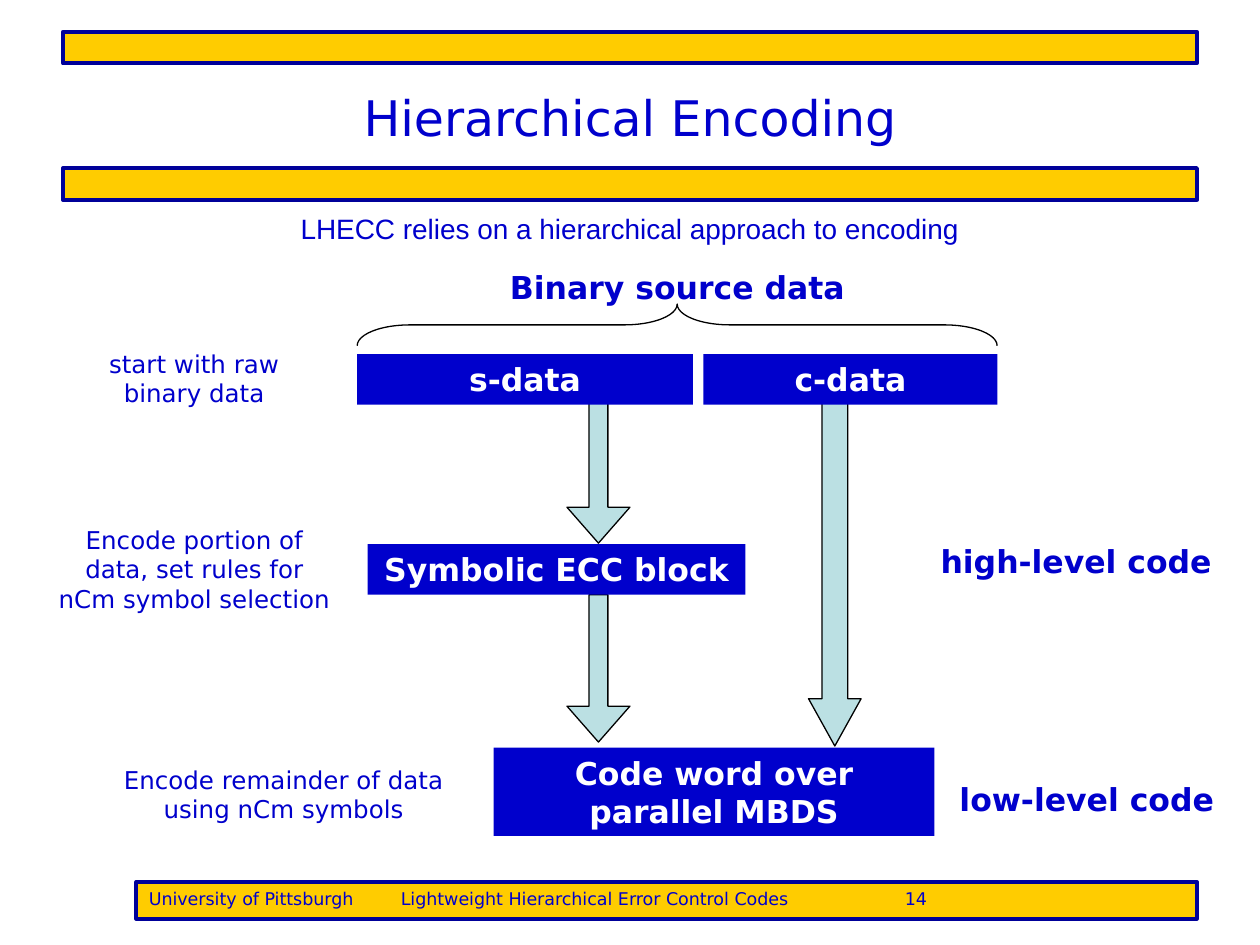
from dataclasses import dataclass

from lxml import etree
from pptx import Presentation
from pptx.dml.color import RGBColor
from pptx.enum import shapes, text
from pptx.oxml import ns
from pptx.util import Cm, Pt

BLUE = RGBColor(0x00, 0x00, 0xCC)
NAVY = RGBColor(0x00, 0x00, 0x99)
GOLD = RGBColor(0xFF, 0xCC, 0x00)
TEAL = RGBColor(0xBB, 0xE0, 0xE3)
BLACK = RGBColor(0x00, 0x00, 0x00)
WHITE = RGBColor(0xFF, 0xFF, 0xFF)
SANS = "DejaVu Sans"
KIND = shapes.MSO_SHAPE
ALIGN = text.PP_ALIGN
ANCHOR = text.MSO_ANCHOR


@dataclass
class Area:
    """A frame in centimetres."""
    left: float
    top: float
    width: float
    height: float

    def frame(self) -> tuple:
        return Cm(self.left), Cm(self.top), Cm(self.width), Cm(self.height)


@dataclass
class Label:
    words: str
    area: Area
    size: int = 18
    bold: bool = True
    font: str = SANS
    anchor: ANCHOR = ANCHOR.TOP


@dataclass
class Arrow:
    area: Area
    shaft: float
    head: float


def write(shape, words: str, size=18, bold=False, font=SANS, color=BLUE,
          align=ALIGN.CENTER, anchor=ANCHOR.TOP, tabs=()) -> None:
    frame = shape.text_frame
    frame.word_wrap = True
    frame.vertical_anchor = anchor
    para = frame.paragraphs[0]
    para.alignment = align
    if tabs:
        stops = etree.SubElement(para._p.get_or_add_pPr(), ns.qn("a:tabLst"))
        for stop in tabs:
            etree.SubElement(stops, ns.qn("a:tab"), pos=str(Cm(stop)), algn="l")
    run = para.add_run()
    run.text = words
    run.font.name = font
    run.font.size = Pt(size)
    run.font.bold = bold
    run.font.color.rgb = color


def draw(slide, kind, area: Area, fill=None, line=None, weight=0.75, adjust=()):
    shape = slide.shapes.add_shape(kind, *area.frame())
    shape.shadow.inherit = False
    if fill is None:
        shape.fill.background()
    else:
        shape.fill.solid()
        shape.fill.fore_color.rgb = fill
    if line is None:
        shape.line.fill.background()
    else:
        shape.line.color.rgb = line
        shape.line.width = Pt(weight)
    for index, value in enumerate(adjust):
        shape.adjustments[index] = value
    return shape


def band(slide, area: Area):
    return draw(slide, KIND.RECTANGLE, area, GOLD, NAVY, 2.25)


def block(slide, label: Label) -> None:
    shape = draw(slide, KIND.RECTANGLE, label.area, BLUE)
    write(shape, label.words, bold=True, color=WHITE)


def caption(slide, label: Label) -> None:
    box = slide.shapes.add_textbox(*label.area.frame())
    write(box, label.words, size=label.size, bold=label.bold,
          font=label.font, anchor=label.anchor)


ARROWS = [
    Arrow(Area(16.3, 8.05, 1.06, 6.99), 0.49, 0.9),
    Arrow(Area(11.43, 7.98, 1.27, 2.97), 0.3, 0.57),
    Arrow(Area(11.43, 11.99, 1.27, 2.97), 0.3, 0.57),
]
BLOCKS = [
    Label("s-data", Area(7.2, 7.14, 6.77, 1.02)),
    Label("c-data", Area(14.18, 7.14, 5.93, 1.02)),
    Label("Symbolic ECC block", Area(7.41, 10.97, 7.62, 1.02)),
    Label("Code word over parallel MBDS", Area(9.95, 15.07, 8.89, 1.78)),
]
CAPTIONS = [
    Label("Hierarchical Encoding", Area(1.27, 0.76, 22.86, 3.18), 28, False,
          anchor=ANCHOR.MIDDLE),
    Label("LHECC relies on a hierarchical approach to encoding",
          Area(2.96, 4.14, 19.47, 0.94), 16, False, "Arial"),
    Label("Binary source data", Area(7.62, 5.28, 12.07, 1.02)),
    Label("start with raw binary data", Area(1.69, 6.91, 4.45, 1.45), 14, False),
    Label("Encode portion of data, set rules for nCm symbol selection",
          Area(0.85, 10.46, 6.14, 2.04), 14, False),
    Label("Encode remainder of data using nCm symbols",
          Area(1.91, 15.29, 7.62, 1.45), 14, False),
    Label("high-level code", Area(18.2, 10.8, 6.99, 1.02)),
    Label("low-level code", Area(18.84, 15.6, 6.14, 1.02)),
]


def main() -> None:
    deck = Presentation()
    deck.slide_width, deck.slide_height = Cm(25.4), Cm(19.05)
    slide = deck.slides.add_slide(deck.slide_layouts[6])

    for top in (0.64, 3.39):
        band(slide, Area(1.27, top, 22.86, 0.64))
    foot = band(slide, Area(2.75, 17.78, 21.38, 0.74))
    write(foot, "University of Pittsburgh\tLightweight Hierarchical Error Control Codes\t14",
          size=10, align=ALIGN.LEFT, tabs=(5.08, 15.24))

    for arrow in ARROWS:
        draw(slide, KIND.DOWN_ARROW, arrow.area, TEAL, BLACK,
             adjust=(arrow.shaft, arrow.head))
    for label in BLOCKS:
        block(slide, label)
    for label in CAPTIONS:
        caption(slide, label)

    brace = draw(slide, KIND.LEFT_BRACE, Area(13.23, 0.1, 0.84, 12.9),
                 line=BLACK, adjust=(1.27, 0.5))
    brace.rotation = 90
    deck.save("out.pptx")


if __name__ == "__main__":
    main()
